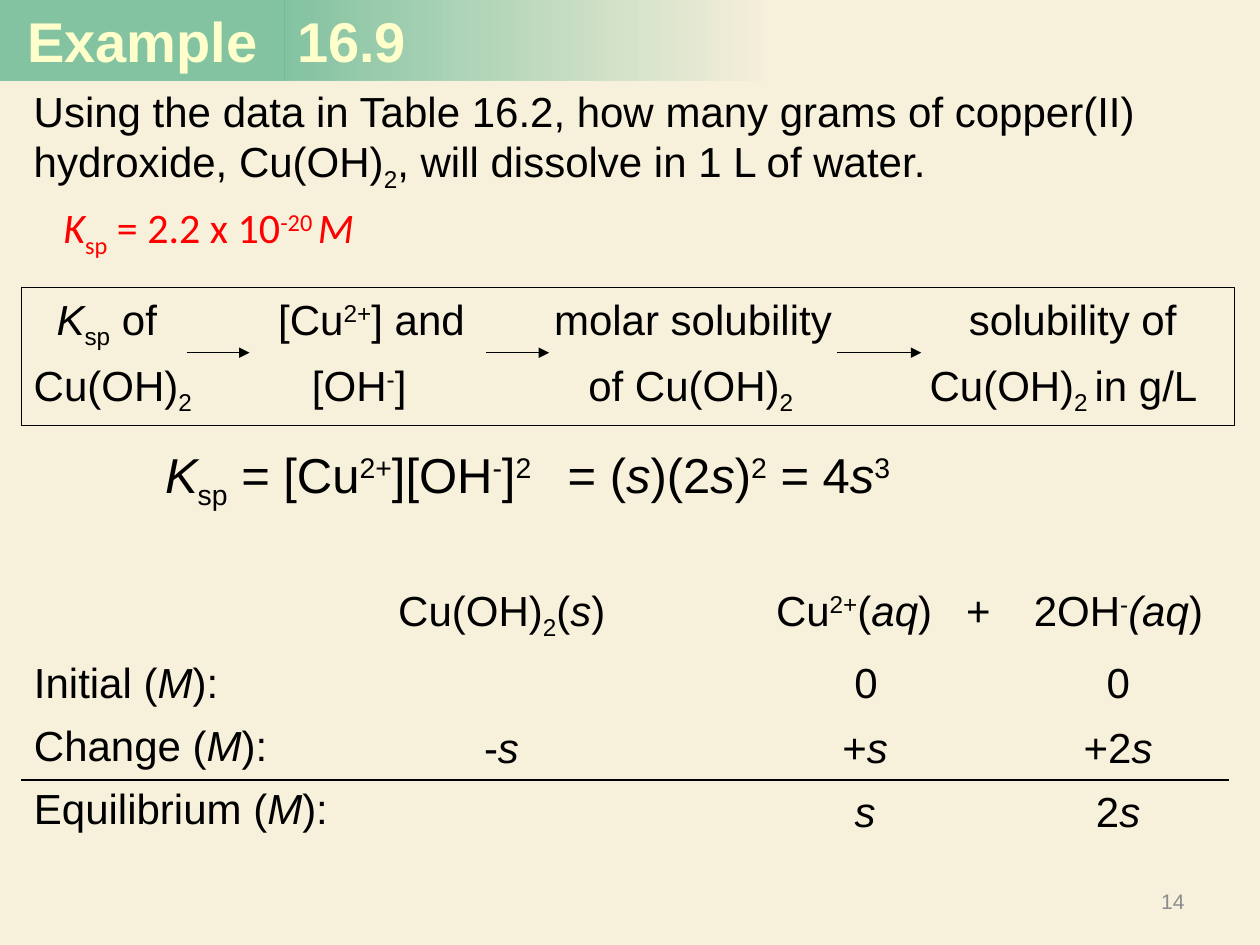
from lxml.etree import SubElement
from pptx import Presentation
from pptx.dml.color import RGBColor
from pptx.enum.shapes import MSO_CONNECTOR, MSO_SHAPE
from pptx.enum.text import MSO_ANCHOR, PP_ALIGN
from pptx.oxml.ns import qn
from pptx.util import Cm, Pt

BLACK, RED, GREEN, CREAM, GRAY = "000000", "FF0000", "109769", "FFFFCC", "8C8C8C"
LEFT, CENTER, RIGHT = PP_ALIGN.LEFT, PP_ALIGN.CENTER, PP_ALIGN.RIGHT
BASELINES = {"sub": "-25000", "sup": "30000"}
S = ("s", "i")  # the unknown solubility


def color(value):
    return RGBColor.from_string(value)


def add_child(parent, tag, **attributes):
    return SubElement(parent, qn(tag), attributes)


def fill_para(para, spans, size=24, font="Arial", ink=BLACK, bold=False, align=LEFT, tabs=()):
    """Write spans given as plain strings or (text, style) pairs."""
    para.alignment = align
    if tabs:
        tab_list = add_child(para._p.get_or_add_pPr(), "a:tabLst")
        for stop in tabs:
            add_child(tab_list, "a:tab", pos=str(Cm(stop)), algn="l")
    for item in spans:
        text, style = (item, "") if isinstance(item, str) else item
        span = para.add_run()
        span.text = text
        span.font.size, span.font.name = Pt(size), font
        span.font.bold, span.font.italic = bold, style == "i"
        span.font.color.rgb = color(ink)
        if style in BASELINES:
            span.font._element.set("baseline", BASELINES[style])


def add_text(page, x, y, width, height, spans, wrap=True, anchor=MSO_ANCHOR.TOP, **style):
    box = page.shapes.add_textbox(Cm(x), Cm(y), Cm(width), Cm(height))
    box.text_frame.word_wrap = wrap
    box.text_frame.vertical_anchor = anchor
    fill_para(box.text_frame.paragraphs[0], spans, **style)


def add_box(page, x, y, width, height, anchor=MSO_ANCHOR.TOP):
    box = page.shapes.add_shape(MSO_SHAPE.RECTANGLE, Cm(x), Cm(y), Cm(width), Cm(height))
    box.shadow.inherit = False
    box.fill.background()
    box.line.fill.background()
    box.text_frame.word_wrap = True
    box.text_frame.vertical_anchor = anchor
    return box


def set_alpha(fill_element, percents):
    for node, percent in zip(fill_element.iter(qn("a:srgbClr")), percents):
        add_child(node, "a:alpha", val=str(percent * 1000))


def add_title(page):
    # Solid half with the word, fading half with the number
    label = add_box(page, 0, 0, 5.74, 1.63)
    label.fill.solid()
    label.fill.fore_color.rgb = color(GREEN)
    set_alpha(label._element.spPr.find(qn("a:solidFill")), [50])
    fill_para(label.text_frame.paragraphs[0], ["Example"], 32, ink=CREAM, bold=True, align=CENTER)

    number = add_box(page, 5.74, 0, 9.68, 1.63, MSO_ANCHOR.MIDDLE)
    number.fill.gradient()
    number.fill.gradient_angle = 0
    gradient = number._element.spPr.find(qn("a:gradFill"))
    stops = gradient.find(qn("a:gsLst"))
    stops.clear()
    for place in (0, 50, 100):
        stop = add_child(stops, "a:gs", pos=str(place * 1000))
        add_child(stop, "a:srgbClr", val=GREEN)
    set_alpha(gradient, [50, 25, 0])
    fill_para(number.text_frame.paragraphs[0], ["16.9"], 32, ink=CREAM, bold=True)


def add_arrow(page, start, end, y):
    arrow = page.shapes.add_connector(MSO_CONNECTOR.STRAIGHT, Cm(start), Cm(y), Cm(end), Cm(y))
    arrow.line.color.rgb = color(BLACK)
    arrow.line.width = Pt(0.75)
    add_child(arrow.line._get_or_add_ln(), "a:tailEnd", type="triangle")
    add_child(arrow._element.spPr, "a:effectLst")


def add_plan(page):
    box = add_box(page, 0.43, 5.79, 24.46, 2.79)
    box.line.color.rgb = color(BLACK)
    box.line.width = Pt(0.75)
    frame = box.text_frame
    top = ["\t", ("K", "i"), ("sp", "sub"), " of\t[Cu", ("2+", "sup"),
           "] and\tmolar solubility\tsolubility of"]
    bottom = ["Cu(OH)", ("2", "sub"), "\t[OH", ("-", "sup"), "]\tof Cu(OH)", ("2", "sub"),
              "\tCu(OH)", ("2 ", "sub"), "in g/L"]
    fill_para(frame.paragraphs[0], top, tabs=(0.46, 4.93, 10.49, 18.85))
    second = frame.add_paragraph()
    second.space_before = Pt(5)
    fill_para(second, bottom, tabs=(5.61, 11.18, 18.06))
    for start, end in ((3.76, 5.03), (9.8, 11.07), (16.87, 18.57)):
        add_arrow(page, start, end, 7.11)


def set_borders(cell, lined_side):
    properties = cell._tc.get_or_add_tcPr()
    for side in ("a:lnL", "a:lnR", "a:lnT", "a:lnB"):
        line = add_child(properties, side, w=str(Pt(1)))
        if side == lined_side:
            add_child(add_child(line, "a:solidFill"), "a:srgbClr", val=BLACK)
        else:
            add_child(line, "a:noFill")


def add_concentrations(page):
    widths, heights = (6.55, 6.27, 1.35, 5.72, 4.45), (1.45, 1.27, 1.27, 1.45)
    frame = page.shapes.add_table(len(heights), len(widths), Cm(0.43), Cm(11.73),
                                  Cm(sum(widths)), Cm(sum(heights)))
    table = frame.table
    table.first_row = table.horz_banding = False
    for column, width in zip(table.columns, widths):
        column.width = Cm(width)
    lined = {2: "a:lnB", 3: "a:lnT"}
    for index, (row, height) in enumerate(zip(table.rows, heights)):
        row.height = Cm(height)
        for cell in row.cells:
            set_borders(cell, lined.get(index))
            cell.fill.background()

    def write(row, column, spans, **style):
        fill_para(table.cell(row, column).text_frame.paragraphs[0], spans, **style)

    # Reaction
    write(0, 1, ["Cu(OH)", ("2", "sub"), "(", S, ")"], align=CENTER)
    write(0, 3, ["\tCu", ("2+", "sup"), "(", ("aq", "i"), ")\t+"], tabs=(0.79, 4.62))
    write(0, 4, ["2OH", ("-", "sup"), ("(aq", "i"), ")"], align=CENTER)
    # Row labels and starting values
    for row, name in enumerate(("Initial", "Change", "Equilibrium"), 1):
        write(row, 0, [f"{name} (", ("M", "i"), "):"])
    for column in (3, 4):
        write(1, column, ["0"], align=CENTER)


def main():
    deck = Presentation()
    deck.slide_width, deck.slide_height = Cm(25.4), Cm(19.05)
    page = deck.slides.add_slide(deck.slide_layouts[6])
    page.background.fill.solid()
    page.background.fill.fore_color.rgb = color("F7F0DB")

    add_title(page)
    # Question and given constant
    add_text(page, 0.43, 1.6, 24.46, 2.74,
             ["Using the data in Table 16.2, how many grams of copper(II) hydroxide, Cu(OH)",
              ("2", "sub"), ", will dissolve in 1 L of water."])
    add_text(page, 0, 3.94, 8.41, 1.27,
             [("K", "i"), ("sp", "sub"), " = 2.2 x 10", ("-20 ", "sup"), ("M", "i")],
             font="Calibri", ink=RED, align=CENTER)
    add_plan(page)

    # Equilibrium expression
    add_text(page, 2.64, 8.84, 8.76, 1.45,
             [("K", "i"), ("sp", "sub"), " = [Cu", ("2+", "sup"), "][OH", ("-", "sup"), "]",
              ("2", "sup")], size=28, align=CENTER)
    add_text(page, 11.1, 8.84, 7.19, 1.45,
             ["= (", S, ")(2", S, ")", ("2", "sup"), " = 4", S, ("3", "sup")],
             wrap=False, size=28, align=CENTER)

    # Changes and equilibrium values over the table
    add_concentrations(page)
    change, equilibrium = 14.43, 15.72
    for center, y, spans in ((10.11, change, ["-", S]), (17.44, change, ["+", S]),
                             (22.54, change, ["+2", S]), (17.44, equilibrium, [S]),
                             (22.54, equilibrium, ["2", S])):
        add_text(page, center - 1, y, 2, 1.27, spans, wrap=False, align=CENTER)

    # Page number
    add_text(page, 18.21, 17.65, 5.92, 1.02, ["14"], anchor=MSO_ANCHOR.MIDDLE,
             size=12, ink=GRAY, align=RIGHT)
    deck.save("out.pptx")


if __name__ == "__main__":
    main()
